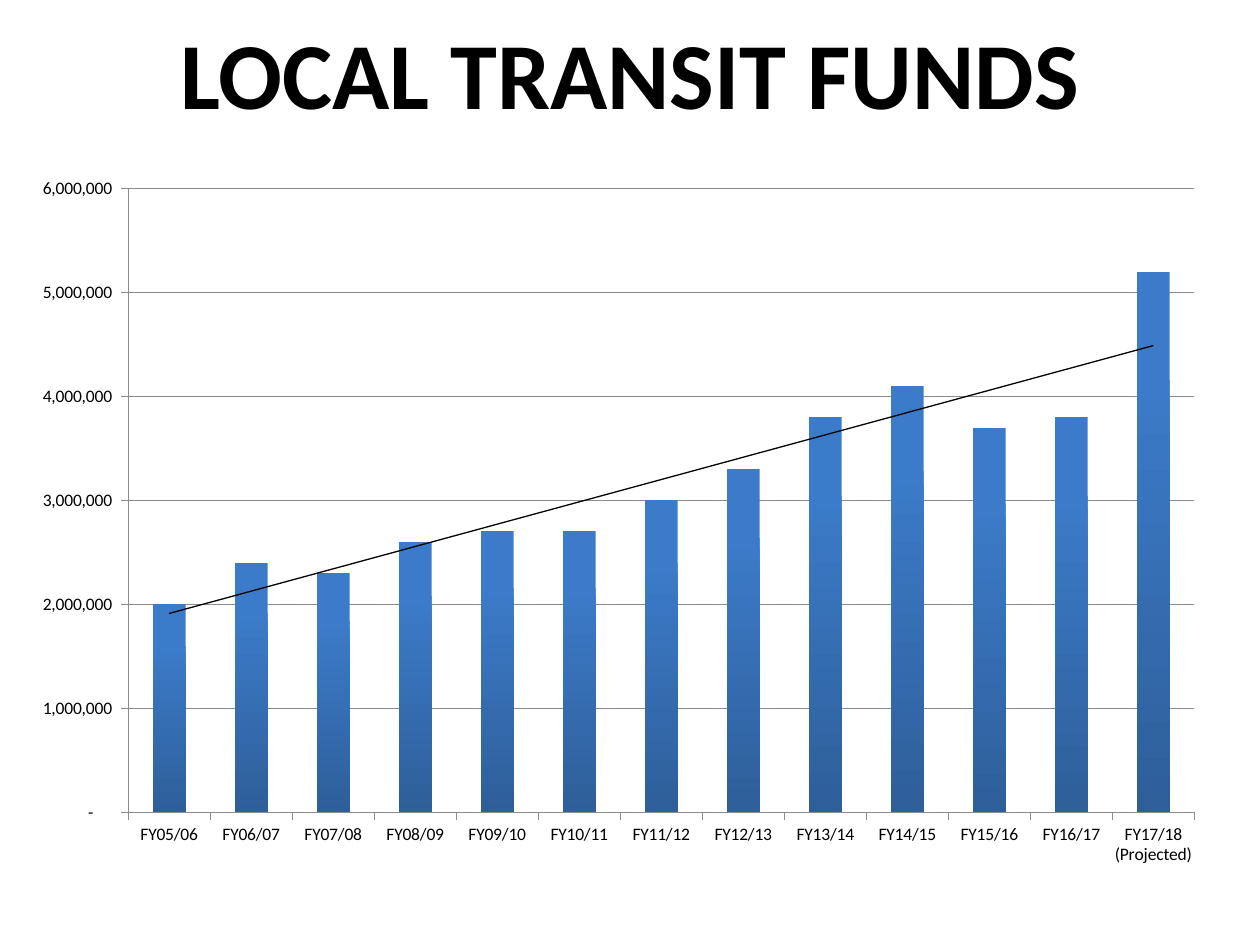
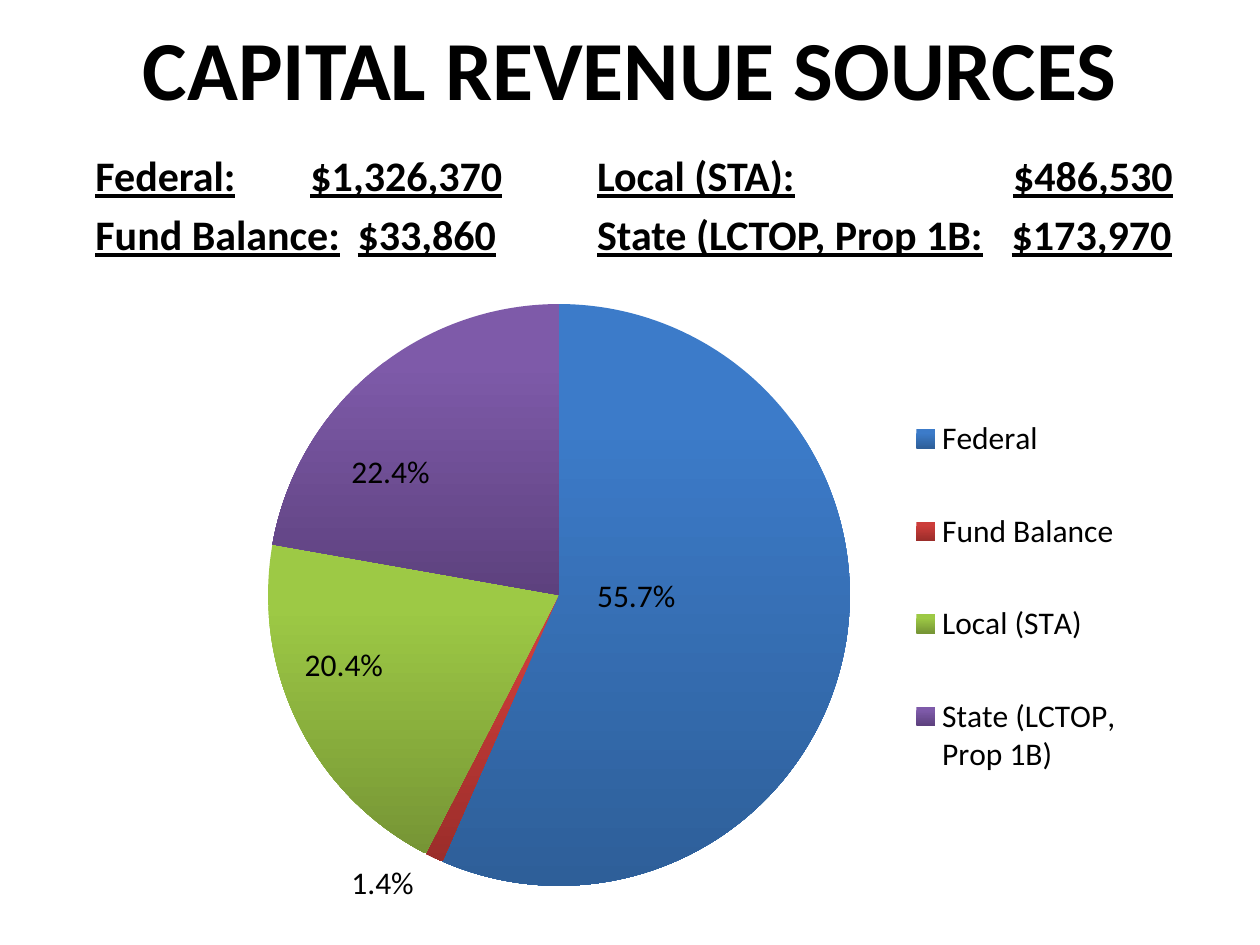
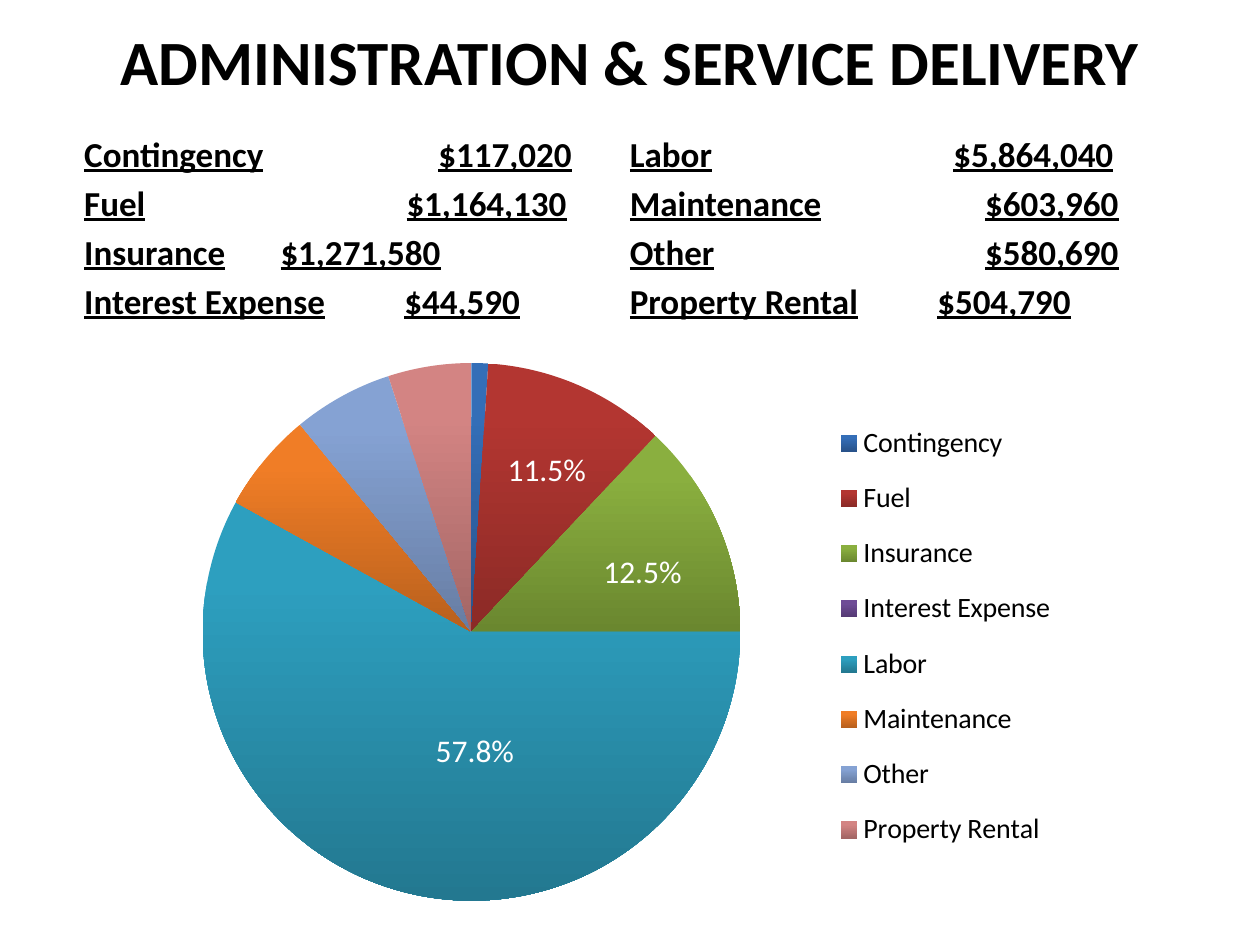
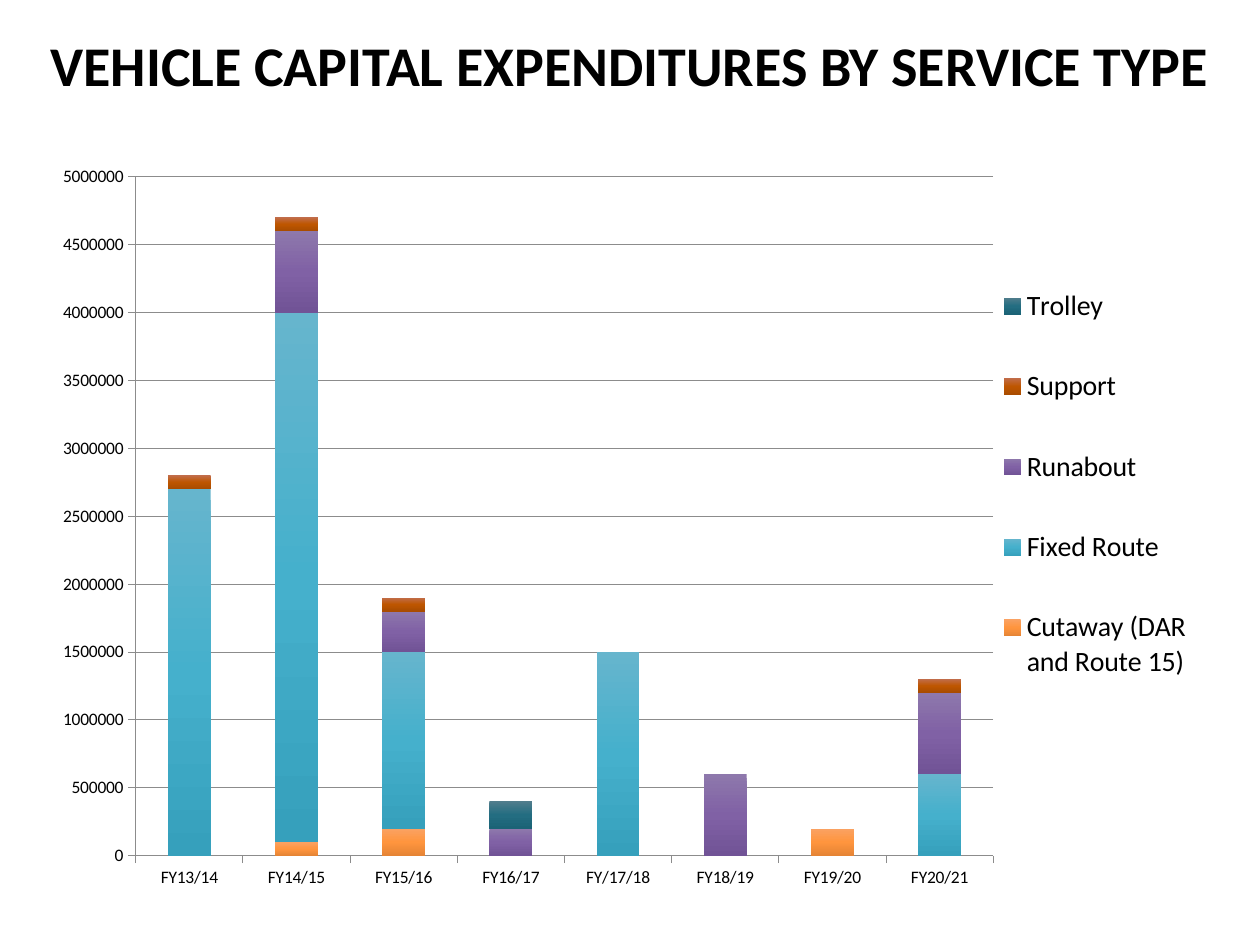
from pptx import Presentation
from pptx import util as u
from pptx.chart.data import CategoryChartData
from pptx.dml.color import RGBColor
from pptx.enum import chart as charts, text
from pptx.oxml import parse_xml
from pptx.oxml.ns import nsdecls, qn

FONT = "Calibri"
COLOURS = {
    "ink": "000000", "paper": "FFFFFF", "rule": "8C8C8C",
    "blue": "3C7BC9", "blue_end": "2E5F99",
    "red": "CC3D3A", "red_end": "9B2D2A",
    "green": "9DC945", "green_end": "769535",
    "purple": "7E5AA9", "purple_end": "5D417E",
    "navy": "346EB7", "navy_end": "28528A",
    "brick": "B33631", "brick_end": "8B2A26",
    "olive": "8AAF3F", "olive_end": "6A872F",
    "violet": "6E4C96", "violet_end": "553A74",
    "teal": "2D9FBF", "teal_end": "237890",
    "orange": "F07D26", "orange_end": "B8601D",
    "sky": "85A2D3", "sky_end": "677DA3",
    "rose": "D38483", "rose_end": "A36665",
    "cutaway": "FAA263", "cutaway_mid": "FF953E", "cutaway_end": "E58435",
    "fixed": "66B5CD", "fixed_mid": "45B0CC", "fixed_end": "36A0BC",
    "runabout": "8E78AC", "runabout_mid": "8061A5", "runabout_end": "715396",
    "support": "C16D4B", "support_mid": "BE5600", "support_end": "A94C00",
    "trolley": "517D8C", "trolley_mid": "236D81", "trolley_end": "1B6376",
}
BAR, STACK, PIE = (charts.XL_CHART_TYPE.COLUMN_CLUSTERED,
                   charts.XL_CHART_TYPE.COLUMN_STACKED,
                   charts.XL_CHART_TYPE.PIE)
M = 1000000

pages = [
    {
        "title": ("LOCAL TRANSIT FUNDS", 54, 0.7, 10.1),
        "chart": {
            "type": BAR, "place": (1.2, 13.1, 95.4, 56.7),
            "plot": (9.4, 3.3, 88.7, 87.3),
            "categories": [f"FY{year:02}/{year + 1:02}" for year in range(5, 17)]
            + ["FY17/18 (Projected)"],
            "series": {"Local transit funds": [
                2, 2.4, 2.3, 2.6, 2.7, 2.7, 3, 3.3, 3.8, 4.1, 3.7, 3.8, 5.2]},
            "fills": ["blue"], "maximum": 6 * M, "unit": M, "trend": True,
            "format": '_(* #,##0_);_(* \\(#,##0\\);_(* "-"??_);_(',
        },
    },
    {
        "title": ("CAPITAL REVENUE SOURCES", 48, 0.8, 9.1),
        "size": 24,
        "lists": [
            ((6.6, 11.4, 51.7, 9.9), [
                ("Federal:", "$1,326,370", 3.23),
                ("Fund Balance:", "$33,860", 3.18)]),
            ((46.4, 11.4, 51.7, 9.9), [
                ("Local (STA):", "$486,530", 4.57),
                ("State (LCTOP, Prop 1B:", "$173,970", 4.56)]),
        ],
        "chart": {
            "type": PIE, "place": (5.5, 22.8, 96.2, 48.9),
            "plot": (16.4, 2.7, 48, 94.5),
            "legend": (67.6, 12.7, 21, 75), "legend_size": 18,
            "categories": ["Federal", "Fund Balance", "Local (STA)",
                           "State (LCTOP, Prop 1B)"],
            "series": {"Share": [56, 1, 20, 22]},
            "fills": ["blue", "red", "green", "purple"],
        },
        "label_colour": "ink",
        "labels": [("22.4%", 26.9, 35.4), ("55.7%", 46.4, 45.2),
                   ("20.4%", 23.2, 50.7), ("1.4%", 26.9, 68)],
    },
    {
        "title": ("ADMINISTRATION & SERVICE DELIVERY", 36, 1.3, 7.1),
        "size": 20,
        "lists": [
            ((5.7, 10, 42.5, 16.5), [
                ("Contingency", "$117,020", 3.87),
                ("Fuel", "$1,164,130", 3.83),
                ("Insurance", "$1,271,580", 2.83),
                ("Interest Expense", "$44,590", 3.46)]),
            ((49, 10, 50, 16.5), [
                ("Labor", "$5,864,040", 3.84),
                ("Maintenance", "$603,960", 3.88),
                ("Other", "$580,690", 3.88),
                ("Property Rental", "$504,790", 3.5)]),
        ],
        "chart": {
            "type": PIE, "place": (-12.1, 27.5, 117.9, 45.4),
            "plot": (23.9, 2.9, 36.2, 94),
            "legend": (63.9, 10.2, 20, 81), "legend_size": 16,
            "categories": ["Contingency", "Fuel", "Insurance", "Interest Expense",
                           "Labor", "Maintenance", "Other", "Property Rental"],
            "series": {"Share": [1, 11, 13, 0, 58, 6, 6, 5]},
            "fills": ["navy", "brick", "olive", "violet", "teal", "orange",
                      "sky", "rose"],
        },
        "label_colour": "paper",
        "labels": [("57.8%", 33.6, 57.5), ("12.5%", 46.9, 43.3),
                   ("11.5%", 39.3, 35.2)],
    },
    {
        "title": ("VEHICLE CAPITAL EXPENDITURES BY SERVICE TYPE", 32, 1.9, 6.4),
        "chart": {
            "type": STACK, "place": (5, 12.5, 94.2, 58.9),
            "plot": (5.8, 2.6, 72.5, 91.5),
            "legend": (78.4, 11.5, 17, 65), "legend_size": 16,
            "categories": ["FY13/14", "FY14/15", "FY15/16", "FY16/17",
                           "FY/17/18", "FY18/19", "FY19/20", "FY20/21"],
            "series": {
                "Cutaway (DAR and Route 15)":
                    [None, 0.1, 0.2, None, None, None, 0.2, None],
                "Fixed Route":
                    [2.7, 3.9, 1.3, None, 1.5, None, None, 0.6],
                "Runabout":
                    [None, 0.6, 0.3, 0.2, None, 0.6, None, 0.6],
                "Support":
                    [0.1, 0.1, 0.1, None, 0, None, None, 0.1],
                "Trolley":
                    [None, None, None, 0.2, None, None, None, None],
            },
            "fills": ["cutaway", "fixed", "runabout", "support", "trolley"],
            "maximum": 5 * M, "unit": M / 2, "format": "General",
        },
    },
]

presentation = Presentation()
presentation.slide_width, presentation.slide_height = u.Inches(10), u.Inches(7.5)
column, row = presentation.slide_width / 100, presentation.slide_height / 75


def on_grid(place):
    return [round(value * step) for value, step in zip(place, (column, row) * 2)]


def add_text(slide, place, lines, size, colour="ink", align=None, **style):
    frame = slide.shapes.add_textbox(*on_grid(place)).text_frame
    frame.word_wrap = True
    frame.auto_size = text.MSO_AUTO_SIZE.SHAPE_TO_FIT_TEXT
    for number, line in enumerate(lines):
        paragraph = frame.add_paragraph() if number else frame.paragraphs[0]
        paragraph.alignment = align
        if number:
            paragraph.space_before = u.Pt(size * 0.2)
        run = paragraph.add_run()
        run.text = line
        for name, value in {"name": FONT, "size": u.Pt(size), **style}.items():
            setattr(run.font, name, value)
        run.font.color.rgb = RGBColor.from_string(COLOURS[colour])
    return frame


for page in pages:
    slide = presentation.slides.add_slide(presentation.slide_layouts[6])
    title, size, top, height = page["title"]
    add_text(slide, (0, top, 100, height), [title], size,
             align=text.PP_ALIGN.CENTER, bold=True)

    for place, entries in page.get("lists", []):
        lines = [f"{label}\t{amount}" for label, amount, _ in entries]
        frame = add_text(slide, place, lines, page["size"], bold=True, underline=True)
        for paragraph, (_, _, stop) in zip(frame.paragraphs, entries):
            paragraph._p.get_or_add_pPr().append(parse_xml(
                f'<a:tabLst {nsdecls("a")}><a:tab pos="{u.Inches(stop)}" algn="r"/>'
                "</a:tabLst>"))

    details = page["chart"]
    is_pie = details["type"] == PIE
    data = CategoryChartData()
    data.categories = details["categories"]
    for name, values in details["series"].items():
        data.add_series(name, values if is_pie else [
            None if value is None else round(value * M) for value in values])
    chart = slide.shapes.add_chart(
        details["type"], *on_grid(details["place"]), data).chart
    chart.has_title = False
    chart.font.name, chart.font.size = FONT, u.Pt(10)
    chart.font.color.rgb = RGBColor.from_string(COLOURS["ink"])
    chart.has_legend = "legend" in details
    plot = chart.plots[0]
    plot.vary_by_categories = is_pie

    layouts = [(chart._chartSpace.chart.plotArea, details["plot"], True)]
    if chart.has_legend:
        chart.legend.position = charts.XL_LEGEND_POSITION.RIGHT
        chart.legend.include_in_layout = False
        chart.legend.font.name = FONT
        chart.legend.font.size = u.Pt(details["legend_size"])
        chart.legend.font.color.rgb = RGBColor.from_string(COLOURS["ink"])
        layouts.append((chart.legend._element, details["legend"], False))
    for element, percents, inner in layouts:
        for old in element.findall(qn("c:layout")):
            element.remove(old)
        target = '<c:layoutTarget val="inner"/>' if inner else ""
        modes = "".join(f'<c:{axis}Mode val="edge"/>' for axis in "xy")
        sizes = "".join(f'<c:{axis} val="{percent / 100:.3f}"/>'
                        for axis, percent in zip("xywh", percents))
        layout = parse_xml(f'<c:layout {nsdecls("c")}><c:manualLayout>'
                           f"{target}{modes}{sizes}</c:manualLayout></c:layout>")
        if inner:
            element.insert(0, layout)
        else:
            element.find(qn("c:legendPos")).addnext(layout)

    series = list(plot.series)
    parts = ([series[0].points[index] for index in range(len(details["fills"]))]
             if is_pie else series)
    for part, shade in zip(parts, details["fills"]):
        fill = part.format.fill
        fill.gradient()
        fill.gradient_angle = 270
        middle = f"{shade}_mid"
        stops = [(0, shade),
                 (50, middle) if middle in COLOURS else (20, shade),
                 (100, f"{shade}_end")]
        stop_list = part.format._element.find(".//" + qn("a:gsLst"))
        for old in list(stop_list):
            stop_list.remove(old)
        for position, colour in stops:
            stop_list.append(parse_xml(
                f'<a:gs {nsdecls("a")} pos="{position * 1000}">'
                f'<a:srgbClr val="{COLOURS[colour]}"/></a:gs>'))
        part.format.line.fill.background()

    if not is_pie:
        plot.gap_width = 150
        plot.overlap = 100 if details["type"] == STACK else 0
        value_axis = chart.value_axis
        for name, value in {"minimum_scale": 0, "maximum_scale": details["maximum"],
                            "major_unit": details["unit"],
                            "has_major_gridlines": True}.items():
            setattr(value_axis, name, value)
        value_axis.tick_labels.number_format = details["format"]
        value_axis.tick_labels.number_format_is_linked = False
        for axis in (chart.category_axis, value_axis):
            axis.major_tick_mark = charts.XL_TICK_MARK.OUTSIDE
            axis.tick_labels.font.size = u.Pt(10)
        for ruled in (chart.category_axis, value_axis, value_axis.major_gridlines):
            ruled.format.line.color.rgb = RGBColor.from_string(COLOURS["rule"])
            ruled.format.line.width = u.Pt(0.5)
    if details.get("trend"):
        series[0]._element.find(qn("c:cat")).addprevious(parse_xml(
            f'<c:trendline {nsdecls("c", "a")}><c:spPr><a:ln w="9525"><a:solidFill>'
            f'<a:srgbClr val="{COLOURS["ink"]}"/></a:solidFill></a:ln></c:spPr>'
            '<c:trendlineType val="linear"/><c:dispRSqr val="0"/>'
            '<c:dispEq val="0"/></c:trendline>'))

    for label, left, top in page.get("labels", []):
        add_text(slide, (left, top, 9.2, 4), [label], 18, page["label_colour"])

presentation.save("out.pptx")
